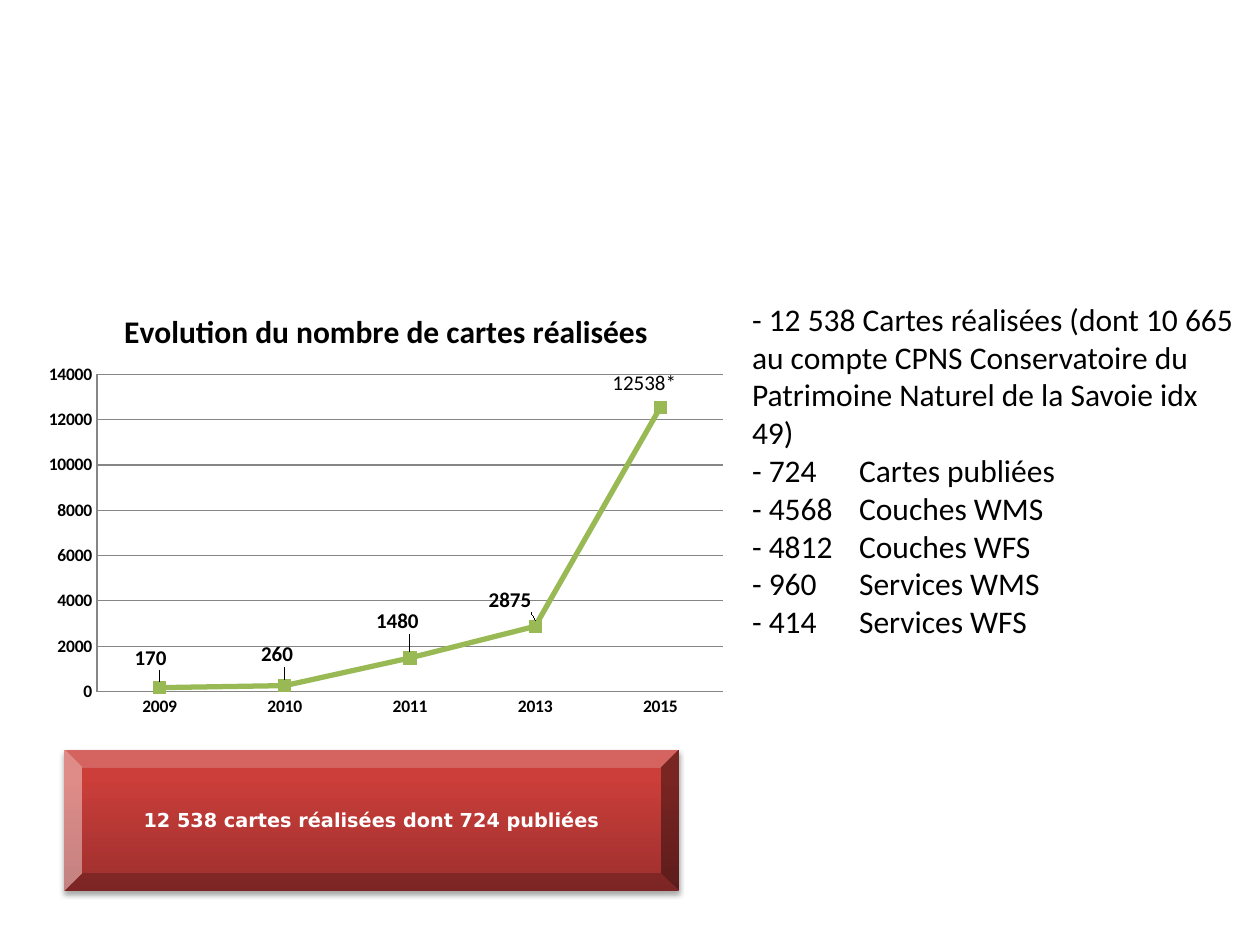
import pptx
import pptx.chart.data
import pptx.dml.color
import pptx.enum.chart
import pptx.enum.shapes
import pptx.enum.text
import pptx.oxml
import pptx.oxml.ns
import pptx.util
from pptx.util import Inches, Pt

TITLE = "Evolution du nombre de cartes réalisées"
YEARS = ["2009", "2010", "2011", "2013", "2015"]
MAPS = [170, 260, 1480, 2875, 12538]
LAST_LABEL = "12538*"
# Shift of each label from its place above the point, in inches
LABEL_SHIFTS = [(-0.07, -0.05), (-0.06, -0.06), (-0.1, -0.1), (-0.2, -0.02), (-0.13, 0)]
INTRO = ("- 12 538 Cartes réalisées (dont 10 665 au compte CPNS "
         "Conservatoire du Patrimoine Naturel de la Savoie idx 49)")
COUNTS = [("724", "Cartes publiées"), ("4568", "Couches WMS"), ("4812", "Couches WFS"),
          ("960", "Services WMS"), ("414", "Services WFS")]
BANNER = "12 538 cartes réalisées dont 724 publiées"
BANNER_STOPS = [(0, "9C2F2D"), (80, "CB3E3A"), (100, "CE3B37")]

CHART_BOX = (0.28, 2.29, 5.57, 3.47)
PLOT_BOX = (0.77, 2.97, 4.97, 2.52)
GREEN, GRAY, BLACK, WHITE = "98B954", "868686", "000000", "FFFFFF"


def rgb(value):
    return pptx.dml.color.RGBColor.from_string(value)


def style(font, size, bold=False, color=BLACK, name="Calibri"):
    font.size, font.bold, font.name = Pt(size), bold, name
    font.color.rgb = rgb(color)


def xml(prefix, body):
    """Parse one element whose tag uses the given namespace prefix."""
    start, rest = body.split(">", 1)
    return pptx.oxml.parse_xml(f"{start} {pptx.oxml.ns.nsdecls(prefix)}>{rest}")


def manual_layout(x, y, width=None, height=None):
    parts = '<c:layoutTarget val="inner"/><c:xMode val="edge"/><c:yMode val="edge"/>' if width else ""
    values = {"x": x, "y": y, "w": width, "h": height}
    parts += "".join(f'<c:{key} val="{value:.3f}"/>' for key, value in values.items() if value is not None)
    return xml("c", f"<c:layout><c:manualLayout>{parts}</c:manualLayout></c:layout>")


def add_chart(slide):
    data = pptx.chart.data.CategoryChartData()
    data.categories = YEARS
    data.add_series("Series 1", MAPS)
    chart = slide.shapes.add_chart(pptx.enum.chart.XL_CHART_TYPE.LINE_MARKERS,
                                   *map(Inches, CHART_BOX), data).chart
    chart.has_legend = False
    style(chart.font, 10)
    chart.has_title = True
    chart.chart_title.text_frame.text = TITLE
    style(chart.chart_title.text_frame.paragraphs[0].runs[0].font, 18, bold=True)
    chart.chart_title.include_in_layout = False

    left, top, width, height = CHART_BOX
    plot_left, plot_top, plot_width, plot_height = PLOT_BOX
    plot_area = chart._chartSpace.chart.plotArea
    for old in plot_area.findall(pptx.oxml.ns.qn("c:layout")):
        plot_area.remove(old)
    plot_area.insert(0, manual_layout((plot_left - left) / width, (plot_top - top) / height,
                                      plot_width / width, plot_height / height))

    for axis in (chart.category_axis, chart.value_axis):
        axis.major_tick_mark = axis.minor_tick_mark = pptx.enum.chart.XL_TICK_MARK.NONE
        style(axis.tick_labels.font, 10, bold=True)
        axis.format.line.color.rgb = rgb(GRAY)
    value_axis = chart.value_axis
    value_axis.minimum_scale, value_axis.maximum_scale, value_axis.major_unit = 0, 14000, 2000
    value_axis.major_gridlines.format.line.color.rgb = rgb(GRAY)

    chart.plots[0].vary_by_categories = False
    series = chart.plots[0].series[0]
    series.smooth = False
    series.format.line.width = Pt(3)
    series.format.line.color.rgb = rgb(GREEN)
    series.marker.style = pptx.enum.chart.XL_MARKER_STYLE.SQUARE
    series.marker.size = 7
    series.marker.format.fill.solid()
    series.marker.format.fill.fore_color.rgb = rgb(GREEN)
    series.marker.format.line.color.rgb = rgb(GREEN)
    series.data_labels.show_value = True
    style(series.data_labels.font, 12, bold=True)

    for index, (x, y) in enumerate(LABEL_SHIFTS):
        label = series.points[index].data_label
        if index == len(MAPS) - 1:
            label.text_frame.text = LAST_LABEL
            style(label.text_frame.paragraphs[0].runs[0].font, 12)
        else:
            style(label.font, 12, bold=True)
        label.position = pptx.enum.chart.XL_LABEL_POSITION.ABOVE
        label_xml = series.data_labels._element.findall(pptx.oxml.ns.qn("c:dLbl"))[index]
        label_xml.insert(1, manual_layout(x / width, y / height))


def add_banner(slide):
    banner = slide.shapes.add_shape(pptx.enum.shapes.MSO_SHAPE.BEVEL,
                                    Inches(0.51), Inches(5.95), Inches(4.88), Inches(1.12))
    banner.line.fill.background()
    banner.fill.gradient()
    banner.fill.gradient_angle = 90
    properties = banner._element.spPr
    stops = properties.find(".//" + pptx.oxml.ns.qn("a:gsLst"))
    for stop in list(stops):
        stops.remove(stop)
    for position, color in BANNER_STOPS:
        stops.append(xml("a", f'<a:gs pos="{position * 1000}"><a:srgbClr val="{color}"/></a:gs>'))
    banner.shadow.inherit = False
    properties.find(pptx.oxml.ns.qn("a:effectLst")).append(xml(
        "a", f'<a:outerShdw blurRad="{Pt(3.1)}" dist="{Pt(1.8)}" dir="5400000" rotWithShape="0">'
             f'<a:srgbClr val="{BLACK}"><a:alpha val="35000"/></a:srgbClr></a:outerShdw>'))
    frame = banner.text_frame
    frame.text = BANNER
    frame.vertical_anchor = pptx.enum.text.MSO_ANCHOR.MIDDLE
    frame.paragraphs[0].alignment = pptx.enum.text.PP_ALIGN.CENTER
    style(frame.paragraphs[0].runs[0].font, 11, True, WHITE, "DejaVu Sans")


def add_counts(slide):
    frame = slide.shapes.add_textbox(Inches(5.87), Inches(2.33), Inches(4.02), Inches(2.83)).text_frame
    frame.word_wrap = True
    frame.auto_size = pptx.enum.text.MSO_AUTO_SIZE.SHAPE_TO_FIT_TEXT
    frame.text = "\n".join([INTRO] + [f"- {count}\t{label}" for count, label in COUNTS])
    for paragraph in frame.paragraphs:
        paragraph._p.get_or_add_pPr().append(
            xml("a", f'<a:tabLst><a:tab pos="{Inches(0.85)}" algn="l"/></a:tabLst>'))
        for run in paragraph.runs:
            style(run.font, 18)


def main():
    presentation = pptx.Presentation()
    presentation.slide_width, presentation.slide_height = Inches(10), Inches(7.5)
    slide = presentation.slides.add_slide(presentation.slide_layouts[6])
    add_banner(slide)
    add_chart(slide)
    add_counts(slide)
    presentation.save("out.pptx")


if __name__ == "__main__":
    main()
